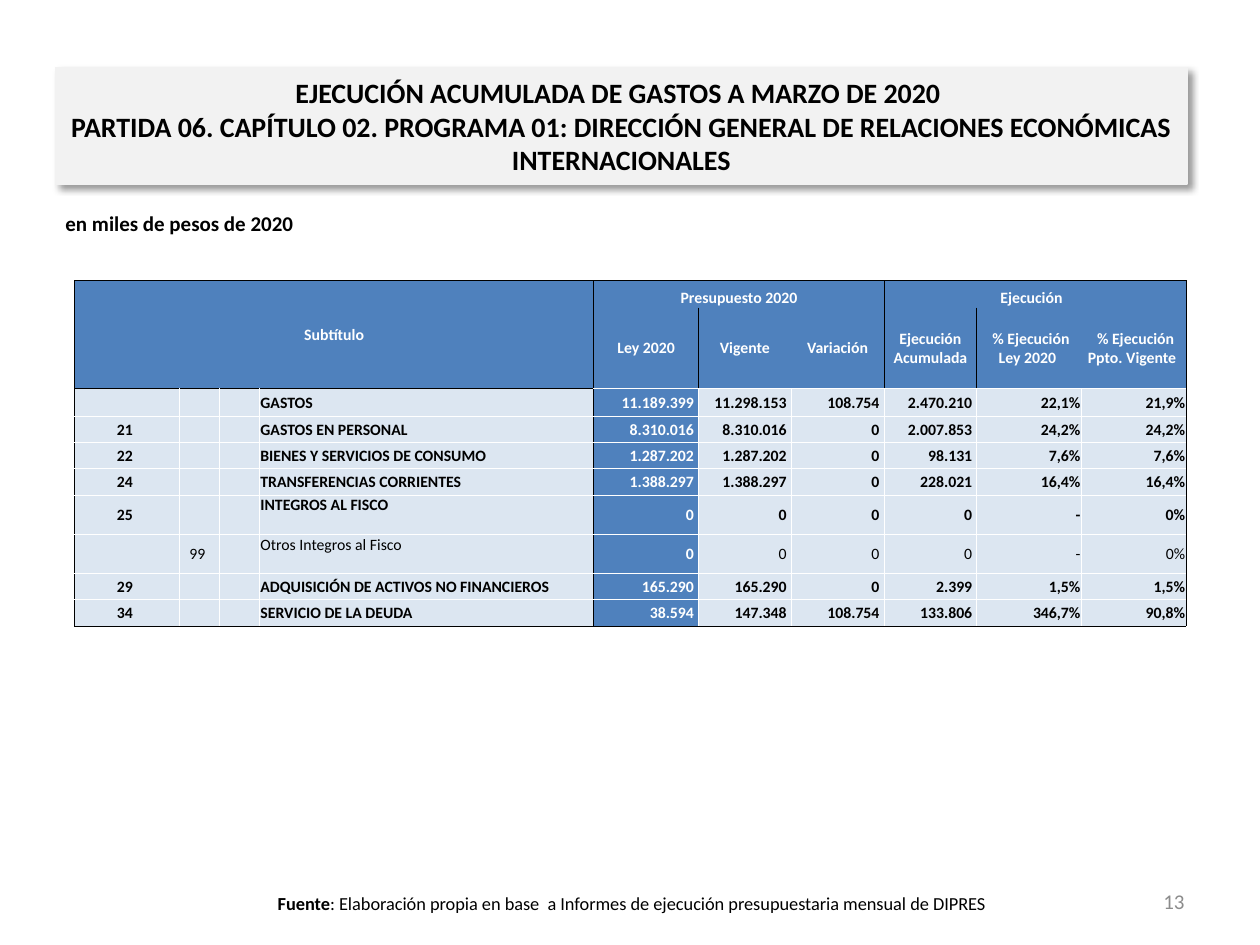
from dataclasses import dataclass
from lxml import etree
from pptx import Presentation
from pptx import util as u
from pptx.dml import color
from pptx.enum import shapes, text
from pptx.oxml import ns

Cm = u.Cm
LEFT, MID, RIGHT = text.PP_ALIGN.LEFT, text.PP_ALIGN.CENTER, text.PP_ALIGN.RIGHT
ANC = text.MSO_ANCHOR


@dataclass(frozen=True)
class Theme:
    font: str = "Calibri"
    ink: str = "000000"
    paper: str = "FFFFFF"
    panel: str = "F2F2F2"
    head: str = "4F81BD"
    body: str = "DCE6F1"
    page: str = "8C8C8C"
    title_pt: float = 16
    note_pt: float = 12
    source_pt: float = 10.5
    cell_pt: float = 9
    rule_pt: float = 0.5


T = Theme()
COLS = [2.11, 0.81, 0.81, 6.74, 2.11, 1.87, 1.87, 1.87, 2.11, 2.11]
LAW = 4  # column of the approved budget, first of the figures
HEADS = ["Ley 2020", "Vigente", "Variación", "Ejecución Acumulada",
         " % Ejecución Ley 2020 ", " % Ejecución Ppto. Vigente "]

# Subtitle code, item code, name, six figures
LINES = [
    ("", "", "GASTOS", "11.189.399", "11.298.153", "108.754", "2.470.210", "22,1%", "21,9%"),
    ("21", "", "GASTOS EN PERSONAL", "8.310.016", "8.310.016", "0", "2.007.853", "24,2%", "24,2%"),
    ("22", "", "BIENES Y SERVICIOS DE CONSUMO", "1.287.202", "1.287.202", "0", "98.131", "7,6%", "7,6%"),
    ("24", "", "TRANSFERENCIAS CORRIENTES", "1.388.297", "1.388.297", "0", "228.021", "16,4%", "16,4%"),
    ("25", "", "INTEGROS AL FISCO", "0", "0", "0", "0", "-", "0%"),
    ("", "99", "Otros Integros al Fisco", "0", "0", "0", "0", "-", "0%"),
    ("29", "", "ADQUISICIÓN DE ACTIVOS NO FINANCIEROS", "165.290", "165.290", "0", "2.399", "1,5%", "1,5%"),
    ("34", "", "SERVICIO DE LA DEUDA", "38.594", "147.348", "108.754", "133.806", "346,7%", "90,8%"),
]
TALL = (4, 5)  # lines with a taller row, name at the top
ROWS = [0.54, 1.63, 0.56] + [0.79 if i in TALL else 0.53 for i in range(1, len(LINES))]


def rgb(hue):
    return color.RGBColor.from_string(hue)


def style(frame, size, hue, bold=False, align=LEFT):
    """Format every run of a text frame."""
    for para in frame.paragraphs:
        para.alignment = align
        for run in para.runs:
            font = run.font
            font.name, font.size, font.bold = T.font, u.Pt(size), bold
            font.color.rgb = rgb(hue)


def label(slide, box, words, size, hue, bold=False, align=LEFT, anchor=ANC.TOP):
    frame = slide.shapes.add_textbox(*map(Cm, box)).text_frame
    frame.word_wrap = True
    frame.vertical_anchor = anchor
    frame.text = words
    style(frame, size, hue, bold, align)
    return frame


def banner(slide, box):
    """Title on a grey panel with a soft shadow."""
    title = slide.shapes.title
    title.left, title.top, title.width, title.height = map(Cm, box)
    title.fill.solid()
    title.fill.fore_color.rgb = rgb(T.panel)
    title.line.color.rgb = rgb(T.panel)
    title.line.width = u.Pt(0.75)
    frame = title.text_frame
    frame.text = ("EJECUCIÓN ACUMULADA DE GASTOS A MARZO DE 2020 \v"
                  "PARTIDA 06. CAPÍTULO 02. PROGRAMA 01: DIRECCIÓN GENERAL "
                  "DE RELACIONES ECONÓMICAS INTERNACIONALES")
    frame.word_wrap = True
    frame.auto_size = text.MSO_AUTO_SIZE.NONE
    frame.vertical_anchor = ANC.MIDDLE
    frame.margin_left = frame.margin_right = Cm(0.28)
    style(frame, T.title_pt, T.ink, True, MID)
    # Shadow: blur 4 pt, offset 3 pt at 45 degrees, 40 % opaque
    props = title.fill._xPr
    fx = etree.SubElement(props, ns.qn("a:effectLst"))
    drop = etree.SubElement(fx, ns.qn("a:outerShdw"), blurRad=str(u.Pt(4)),
                            dist=str(u.Pt(3)), dir="2700000", algn="tl", rotWithShape="0")
    tone = etree.SubElement(drop, ns.qn("a:srgbClr"), val=T.ink)
    etree.SubElement(tone, ns.qn("a:alpha"), val="40000")


def upright(row, edge):
    """Colour of the vertical rule at a column edge."""
    if edge in (0, LAW, len(COLS)) or (row < 2 and edge == 7):
        return T.ink
    return T.paper if row >= 2 else None


def level(edge, col):
    """Colour of the horizontal rule at a row edge."""
    if edge in (0, len(ROWS)) or (edge == 2 and col < LAW):
        return T.ink
    return T.paper if edge >= 2 else None


def border(cell, row, col):
    props = cell._tc.get_or_add_tcPr()
    sides = {"L": upright(row, col), "R": upright(row, col + cell.span_width),
             "T": level(row, col), "B": level(row + cell.span_height, col)}
    spot = 0
    for side, hue in sides.items():
        if hue:
            line = etree.Element(ns.qn("a:ln" + side), w=str(u.Pt(T.rule_pt)))
            fill = etree.SubElement(line, ns.qn("a:solidFill"))
            etree.SubElement(fill, ns.qn("a:srgbClr"), val=hue)
            props.insert(spot, line)
            spot += 1


def put(cell, words, hue, bold, align, anchor=ANC.MIDDLE):
    cell.vertical_anchor = anchor
    frame = cell.text_frame
    if words:
        frame.text = words
        style(frame, T.cell_pt, hue, bold, align)
    else:
        # Keeps an empty cell from stretching its row
        etree.SubElement(frame.paragraphs[0]._p, ns.qn("a:endParaRPr"),
                         sz=str(int(T.cell_pt * 100)))


def budget(slide, box):
    """Budget and execution table."""
    frame = slide.shapes.add_table(len(ROWS), len(COLS), *map(Cm, box))
    grid = frame.table
    grid.first_row = grid.horz_banding = False
    # Plain table style without a grid
    frame._element.find(".//" + ns.qn("a:tableStyleId")).text = \
        "{2D5ABB26-0587-4C30-8999-92F81FD0307C}"
    for part, size in zip(grid.columns, COLS):
        part.width = Cm(size)
    for part, size in zip(grid.rows, ROWS):
        part.height = Cm(size)

    # Heading
    grid.cell(0, 0).merge(grid.cell(1, 3))
    grid.cell(0, 4).merge(grid.cell(0, 6))
    grid.cell(0, 7).merge(grid.cell(0, 9))
    for col, words, anchor in ((0, "Subtítulo", ANC.MIDDLE),
                               (4, "Presupuesto 2020", ANC.BOTTOM),
                               (7, "Ejecución  ", ANC.BOTTOM)):
        put(grid.cell(0, col), words, T.paper, True, MID, anchor)
    for col, words in enumerate(HEADS, LAW):
        put(grid.cell(1, col), words, T.paper, True, MID)

    # Budget lines: an item code marks a detail line, set in plain type
    for i, (code, item, name, *sums) in enumerate(LINES):
        for col, words in enumerate((code, item, "", name, *sums)):
            law = col == LAW
            align = MID if col < 3 else LEFT if col == 3 else RIGHT
            pad = " " if words and (col < 3 or LAW <= col < 8) else ""
            anchor = ANC.TOP if col == 3 and i in TALL else ANC.MIDDLE
            put(grid.cell(i + 2, col), words + pad, T.paper if law else T.ink,
                law or not item, align, anchor)

    # Fills, margins and rules
    for row in range(len(ROWS)):
        for col in range(len(COLS)):
            cell = grid.cell(row, col)
            cell.margin_left = cell.margin_right = cell.margin_top = Cm(0.02)
            cell.margin_bottom = 0
            cell.fill.solid()
            cell.fill.fore_color.rgb = rgb(T.head if row < 2 or col == LAW else T.body)
            border(cell, row, col)


def footer(slide, box):
    """Source line across the box, page number at its right end."""
    left, top, width, height = box
    frame = label(slide, box, "Fuente", T.source_pt, T.ink, True, MID, ANC.MIDDLE)
    run = frame.paragraphs[0].add_run()
    run.text = (": Elaboración propia en base  a Informes de ejecución "
                "presupuestaria mensual de DIPRES")
    style(frame, T.source_pt, T.ink, False, MID)
    frame.paragraphs[0].runs[0].font.bold = True
    label(slide, (left + width - 6.2, top - 0.25, 5.92, 1.02), "13",
          T.note_pt, T.page, align=RIGHT, anchor=ANC.MIDDLE)


def main():
    deck = Presentation()
    deck.slide_width, deck.slide_height = Cm(25.4), Cm(19.05)
    slide = deck.slides.add_slide(deck.slide_layouts[5])
    banner(slide, (1.12, 1.37, 22.81, 2.34))
    label(slide, (1.07, 4.11, 22.86, 1.27), "en miles de pesos de 2020",
          T.note_pt, T.ink, True)
    budget(slide, (1.5, 5.66, sum(COLS), sum(ROWS)))
    footer(slide, (1.07, 17.9, 23.34, 0.61))
    deck.save("out.pptx")


if __name__ == "__main__":
    main()
